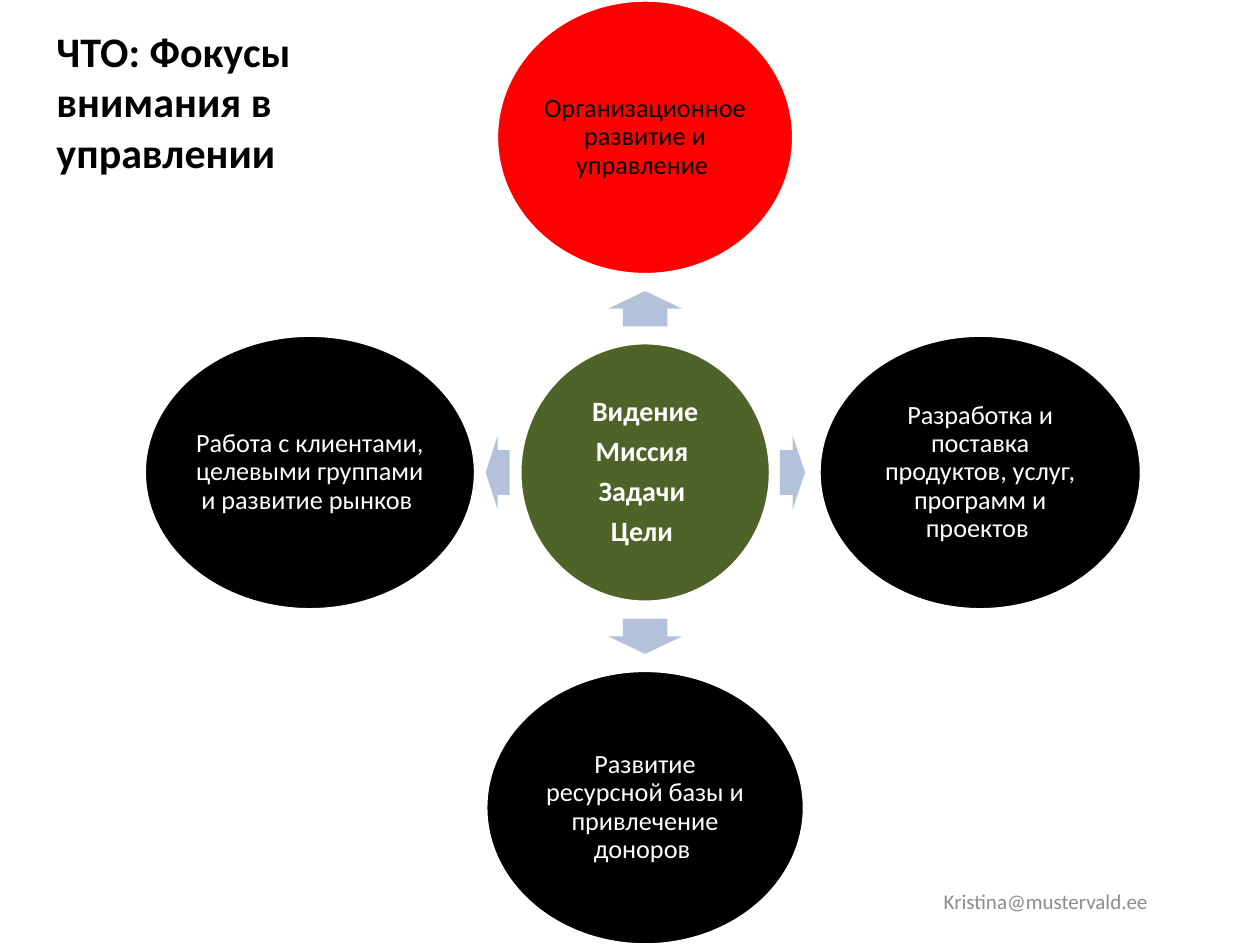
from pptx import Presentation
from pptx.dml.color import RGBColor
from pptx.enum.shapes import MSO_SHAPE
from pptx.enum.text import MSO_ANCHOR, PP_ALIGN
from pptx.util import Inches, Pt

OVAL = MSO_SHAPE.OVAL
ARROW = MSO_SHAPE.RIGHT_ARROW
RECTANGLE = MSO_SHAPE.RECTANGLE
LEFT, CENTER = PP_ALIGN.LEFT, PP_ALIGN.CENTER
MIDDLE = MSO_ANCHOR.MIDDLE

BLACK, WHITE, RED, GREEN = "000000", "FFFFFF", "FF0000", "4F6228"
ARROW_BLUE, GREY = "B3C1DB", "8C8C8C"

HUB_X, HUB_Y = 5.12, 3.75
ORBIT = 2.66  # from the hub to the centre of each outer circle
CIRCLE_HEIGHT = 2.18

# Direction x, y, rotation, circle width, arrow distance, arrow length,
# fill, text colour, text
FOCUSES = [
    (0, -1, 270, 2.36, 1.3, 0.28, RED, BLACK,
     "Организационное развитие и управление "),
    (1, 0, 0, 2.56, 1.17, 0.2, BLACK, WHITE,
     "Разработка и поставка продуктов, услуг, программ и проектов "),
    (0, 1, 90, 2.53, 1.3, 0.28, BLACK, WHITE,
     "Развитие ресурсной базы и привлечение доноров "),
    (-1, 0, 180, 2.63, 1.17, 0.19, BLACK, WHITE,
     "Работа с клиентами, целевыми группами и развитие рынков "),
]


def color(value):
    return RGBColor.from_string(value)


def write(frame, lines, size, text_color, bold=False, align=CENTER,
          inset=None, line_spacing=None, space_after=None):
    frame.word_wrap = True
    frame.vertical_anchor = MIDDLE
    if inset is not None:
        frame.margin_left = frame.margin_right = Inches(inset)
        frame.margin_top = frame.margin_bottom = Inches(inset)
    for index, line in enumerate(lines):
        para = frame.paragraphs[0] if index == 0 else frame.add_paragraph()
        para.alignment = align
        if line_spacing is not None:
            para.line_spacing = line_spacing
        if space_after is not None:
            para.space_after = Pt(space_after)
        span = para.add_run()
        span.text = line
        span.font.name = "Calibri"
        span.font.size = Pt(size)
        span.font.bold = bold
        span.font.color.rgb = color(text_color)


class SlideBuilder:
    def __init__(self, deck):
        self.page = deck.slides.add_slide(deck.slide_layouts[6])

    def shape(self, kind, left, top, width, height, fill):
        shape = self.page.shapes.add_shape(
            kind, Inches(left), Inches(top), Inches(width), Inches(height))
        shape.shadow.inherit = False
        shape.fill.solid()
        shape.fill.fore_color.rgb = color(fill)
        shape.line.fill.background()
        return shape

    def circle(self, x, y, width, height, fill, lines, size, text_color,
               bold=False):
        circle = self.shape(OVAL, x - width / 2, y - height / 2,
                            width, height, fill)
        circle.line.color.rgb = color(WHITE)
        circle.line.width = Pt(2)
        write(circle.text_frame, lines, size, text_color, bold=bold,
              inset=0.02, line_spacing=0.9, space_after=5.5)

    def arrow(self, x, y, length, rotation):
        breadth = 0.59
        arrow = self.shape(ARROW, x - length / 2, y - breadth / 2,
                           length, breadth, ARROW_BLUE)
        arrow.adjustments[0] = 0.6
        arrow.adjustments[1] = 0.5
        arrow.rotation = rotation

    def title(self, text, left, top, width, height):
        box = self.shape(RECTANGLE, left, top, width, height, WHITE)
        write(box.text_frame, [text], 24, BLACK, bold=True, align=LEFT)

    def footer(self, text, left, top, width, height):
        box = self.page.shapes.add_textbox(
            Inches(left), Inches(top), Inches(width), Inches(height))
        write(box.text_frame, [text], 12, GREY)


def main():
    deck = Presentation()
    deck.slide_width, deck.slide_height = Inches(10), Inches(7.5)
    builder = SlideBuilder(deck)

    # Hub
    builder.circle(HUB_X, HUB_Y, 1.99, 2.06, GREEN,
                   ["Видение", "Миссия ", "Задачи ", "Цели "],
                   16, WHITE, bold=True)

    # Arrows and the circles they point to
    for dx, dy, rotation, width, gap, length, fill, ink, text in FOCUSES:
        builder.arrow(HUB_X + dx * gap, HUB_Y + dy * gap, length, rotation)
        builder.circle(HUB_X + dx * ORBIT, HUB_Y + dy * ORBIT,
                       width, CIRCLE_HEIGHT, fill, [text], 15, ink)

    # Footer and title
    builder.footer("Kristina@mustervald.ee", 7.2, 6.95, 2.2, 0.4)
    builder.title("ЧТО: Фокусы внимания в управлении", 0.35, 0.29, 3.54, 1.02)

    deck.save("out.pptx")


if __name__ == "__main__":
    main()
